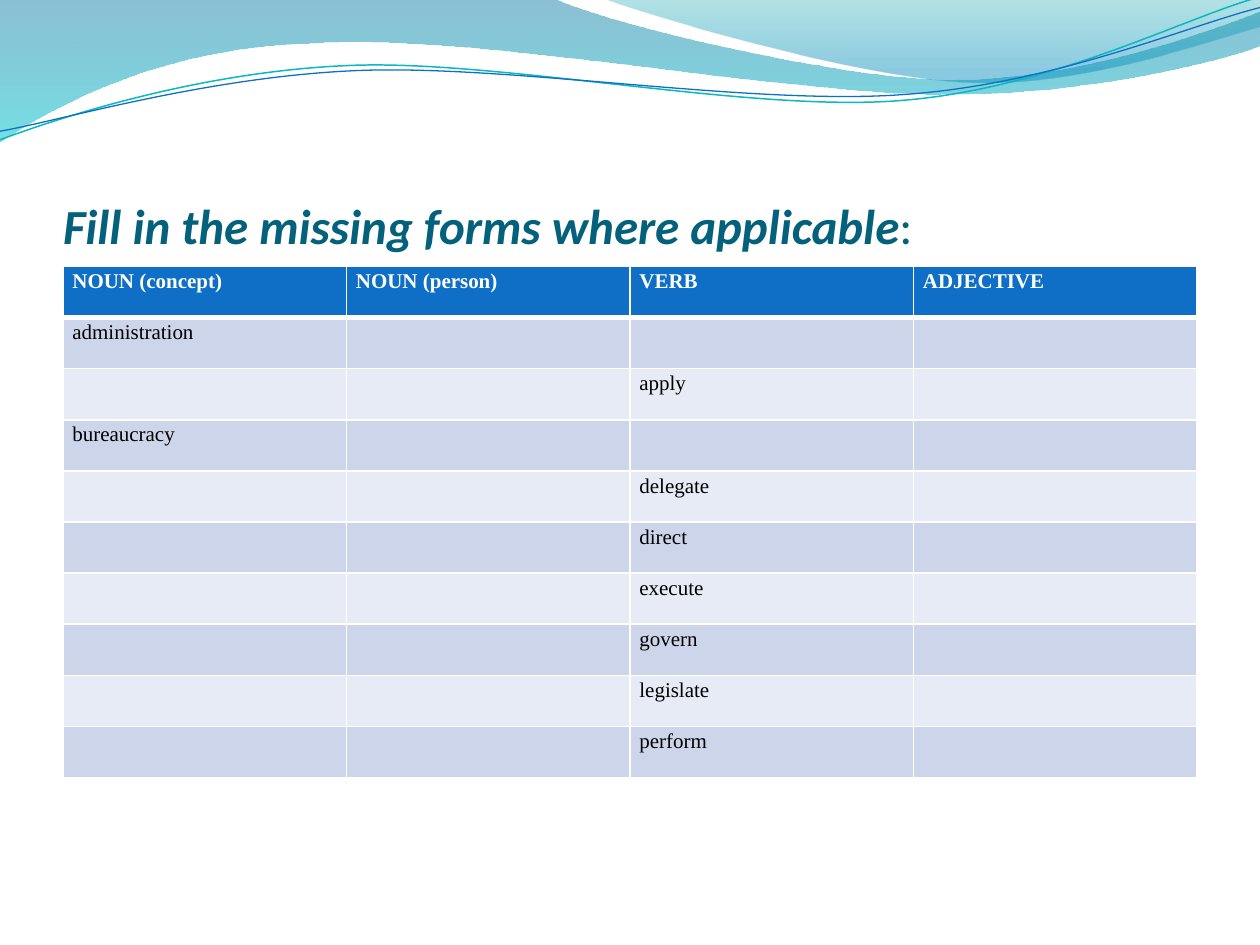
from lxml.etree import SubElement
from pptx import Presentation
from pptx.dml.color import RGBColor
from pptx.enum.text import MSO_ANCHOR, MSO_AUTO_SIZE, PP_ALIGN
from pptx.oxml.ns import qn
from pptx.util import Pt

COLORS = {
    "title": "04617B", "header": "0F6FC6", "odd": "CCD5EA", "even": "E7EBF5",
    "white": "FFFFFF", "black": "000000", "teal line": "0AB8BF",
    "blue line": "0F6FC6", "deep blue": "0074A1", "cyan": "00C6CF",
    "sea green": "00A1A9", "sky blue": "008BBF",
}

# Outlines in points: a pair is a straight step, six numbers are a Bézier curve.
WIDE_WAVE = [
    (0, 0), (316.8, -0.7), (342.7, 12.2, 478.1, 45.4, 545.8, 45.4),
    (614.2, 45.4, 689.8, 18.7, 720, 6.5), (720.7, 25.9),
    (707.8, 31.7, 626.4, 54.7, 537.1, 54), (447.8, 54, 275, 20.2, 185, 24.5),
    (92.9, 25.9, 33.1, 59.8, -0.7, 81.4), (0, 0),
]
RIGHT_WAVE = [
    (344.9, -0.7), (366.5, 7.9, 491, 44.6, 553.7, 46.8),
    (616.3, 49.7, 691.9, 23, 720, 15.1), (720, 0), (344.9, -0.7),
]
# The two thin curves are level here and tilted once drawn.
CURVE_TILT = 357.3
TEAL_CURVE = [
    (-1.4, 62.9), (33.8, 51.7, 114.1, 29.4, 199.8, 29.9),
    (284.9, 30.3, 425.8, 67.3, 512.4, 64.8), (599, 62.4, 676.4, 25.7, 720.2, 15.6),
]
BLUE_CURVE = [
    (-1.1, 58), (32.9, 53.8, 118.3, 32.5, 204.1, 33),
    (290.6, 33.4, 428.9, 63.8, 515.5, 61.4), (601.4, 59.6, 678.4, 30.1, 721.4, 21.3),
]

HEADINGS = ["NOUN (concept)", "NOUN (person)", "VERB", "ADJECTIVE"]
NOUN, VERB = 0, 2
GIVEN_WORDS = [
    (NOUN, "administration"), (VERB, "apply"), (NOUN, "bureaucracy"),
    (VERB, "delegate"), (VERB, "direct"), (VERB, "execute"),
    (VERB, "govern"), (VERB, "legislate"), (VERB, "perform"),
]


def rgb(name):
    return RGBColor.from_string(COLORS[name])


def add_text(paragraph, text, *, font, size, color, bold=False, italic=False):
    run = paragraph.add_run()
    run.text = text
    run.font.name, run.font.size = font, Pt(size)
    run.font.bold, run.font.italic = bold, italic
    run.font.color.rgb = rgb(color)


def bend(shape, steps):
    """Join the three line segments of each six-number step into one curve."""
    segments = iter(list(shape._element.spPr.iter(qn("a:lnTo"))))
    for step in steps:
        group = [next(segments) for _ in range(len(step) // 2)]
        if len(group) == 1:
            continue
        outline = group[0].getparent()
        curve = SubElement(outline, qn("a:cubicBezTo"))
        group[0].addprevious(curve)
        for segment in group:
            curve.append(segment[0])
            outline.remove(segment)


def set_borders(cell, bottom, top):
    properties = cell._tc.get_or_add_tcPr()
    for side, width in (("L", 1), ("R", 1), ("T", top), ("B", bottom)):
        border = SubElement(properties, qn(f"a:ln{side}"), w=str(Pt(width)))
        fill = SubElement(border, qn("a:solidFill"))
        SubElement(fill, qn("a:srgbClr"), val=COLORS["white"])


class WaveSlide:
    title_font = "Calibri"
    table_font = "Times New Roman"
    left, width = 36, 648

    def __init__(self, slide):
        self.slide = slide

    def outline(self, steps, closed):
        (x, y), *rest = steps
        builder = self.slide.shapes.build_freeform(Pt(x), Pt(y))
        corners = [(Pt(step[i]), Pt(step[i + 1]))
                   for step in rest for i in range(0, len(step), 2)]
        builder.add_line_segments(corners, close=closed)
        shape = builder.convert_to_shape()
        bend(shape, rest)
        shape.shadow.inherit = False
        return shape

    def wave(self, steps, *stops):
        """Fill an outline downwards; a stop is (colour, position, opacity %)."""
        shape = self.outline(steps, closed=True)
        shape.line.fill.background()
        shape.fill.gradient()
        shape.fill.gradient_angle = 270
        for stop, (color, position, _) in zip(shape.fill.gradient_stops, stops):
            stop.color.rgb, stop.position = rgb(color), position
        tints = shape._element.spPr.iter(qn("a:srgbClr"))
        for tint, (_, _, opacity) in zip(tints, stops):
            SubElement(tint, qn("a:alpha"), val=str(opacity * 1000))

    def curve(self, steps, color, weight):
        shape = self.outline(steps, closed=False)
        shape.rotation = CURVE_TILT
        shape.fill.background()
        shape.line.color.rgb, shape.line.width = rgb(color), Pt(weight)

    def title(self, emphasis, ending):
        title = self.slide.shapes.title
        title.left, title.top = Pt(self.left), Pt(55.4)
        title.width, title.height = Pt(self.width), Pt(90)
        frame = title.text_frame
        frame.auto_size, frame.word_wrap = MSO_AUTO_SIZE.NONE, True
        frame.vertical_anchor = MSO_ANCHOR.BOTTOM
        frame.margin_left = frame.margin_right = frame.margin_bottom = 0
        frame.margin_top = Pt(3.6)
        paragraph = frame.paragraphs[0]
        paragraph.alignment = PP_ALIGN.LEFT
        style = dict(font=self.title_font, size=28, color="title")
        add_text(paragraph, emphasis, bold=True, italic=True, **style)
        add_text(paragraph, ending, **style)
        self.slide.shapes._spTree.append(title._element)  # in front of the waves

    def table(self, headings, given_words):
        rows = [dict(enumerate(headings))] + [{column: word} for column, word in given_words]
        row_height = 29.2
        table = self.slide.shapes.add_table(
            len(rows), len(headings), Pt(self.left), Pt(152.3),
            Pt(self.width), Pt(row_height * len(rows))).table
        for row_number, words in enumerate(rows):
            table.rows[row_number].height = Pt(row_height)
            for column in range(len(headings)):
                self.cell(table.cell(row_number, column), row_number, words.get(column))

    def cell(self, cell, row_number, word):
        is_header = row_number == 0
        set_borders(cell, bottom=3 if is_header else 1, top=3 if row_number == 1 else 1)
        cell.fill.solid()
        band = "odd" if row_number % 2 else "even"
        cell.fill.fore_color.rgb = rgb("header" if is_header else band)
        if word:
            cell.margin_left = cell.margin_right = Pt(5.4)
            cell.margin_top = cell.margin_bottom = 0
            paragraph = cell.text_frame.paragraphs[0]
            paragraph.line_spacing = 1.15
            add_text(paragraph, word, font=self.table_font, size=12, bold=is_header,
                     color="white" if is_header else "black")


def main():
    presentation = Presentation()
    presentation.slide_width, presentation.slide_height = Pt(720), Pt(540)
    title_only = presentation.slide_layouts.get_by_name("Title Only")
    page = WaveSlide(presentation.slides.add_slide(title_only))
    page.wave(WIDE_WAVE, ("deep blue", 0, 45), ("cyan", 1, 55))
    page.wave(RIGHT_WAVE, ("sea green", 0, 30), ("sky blue", 0.8, 45))
    page.curve(TEAL_CURVE, "teal line", 0.85)
    page.curve(BLUE_CURVE, "blue line", 0.75)
    page.title("Fill in the missing forms where applicable", ":")
    page.table(HEADINGS, GIVEN_WORDS)
    presentation.save("out.pptx")


if __name__ == "__main__":
    main()
